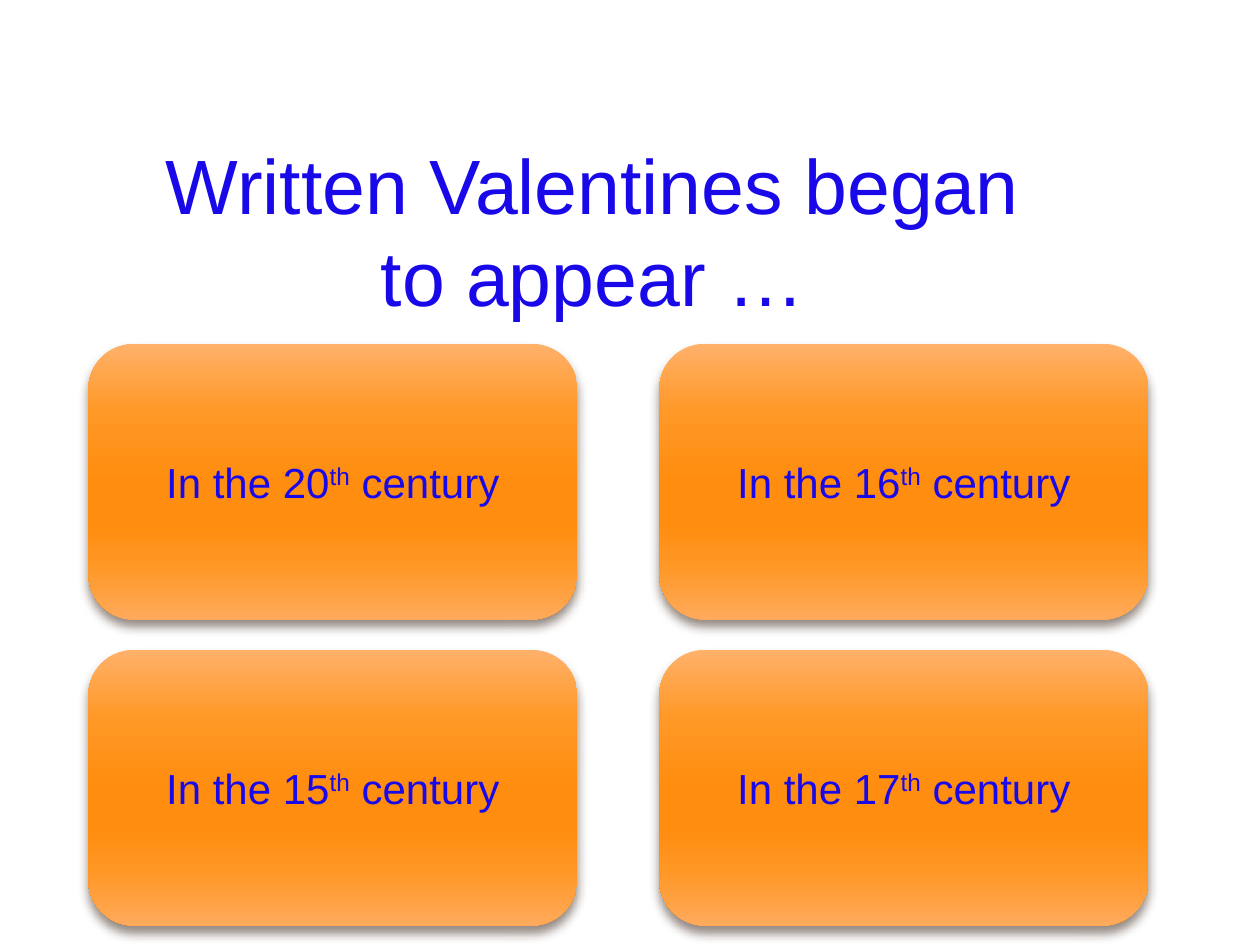
from lxml import etree
from pptx import Presentation
from pptx.dml.color import RGBColor
from pptx.enum.shapes import MSO_SHAPE
from pptx.enum.text import MSO_ANCHOR, MSO_AUTO_SIZE, PP_ALIGN
from pptx.oxml.ns import qn
from pptx.util import Cm, Pt

ROUNDED = MSO_SHAPE.ROUNDED_RECTANGLE
CENTER = PP_ALIGN.CENTER
MIDDLE = MSO_ANCHOR.MIDDLE
GROW = MSO_AUTO_SIZE.SHAPE_TO_FIT_TEXT

BLUE = RGBColor(0x19, 0x09, 0xE9)
SHADOW = RGBColor(0x4E, 0x3B, 0x30)
ORANGE_STOPS = [
    (0, RGBColor(0xFF, 0xB1, 0x6A)),
    (25, RGBColor(0xFF, 0x98, 0x26)),
    (50, RGBColor(0xFF, 0x8D, 0x0F)),
    (65, RGBColor(0xFF, 0x8D, 0x0F)),
    (80, RGBColor(0xFF, 0x97, 0x24)),
    (100, RGBColor(0xFF, 0xAA, 0x5C)),
]

LEFT, TOP = 1.78, 6.93
CARD_WIDTH, CARD_HEIGHT = 9.86, 5.56
COLUMN_STEP, ROW_STEP = 11.51, 6.17
CENTURIES = [["20", "16"], ["15", "17"]]


def add_element(parent, tag, **attributes):
    element = etree.SubElement(parent, qn(tag))
    for name, value in attributes.items():
        element.set(name, str(value))
    return element


class QuizSlide:
    def __init__(self, slide, font_name="Arial", color=BLUE):
        self.slide = slide
        self.font_name = font_name
        self.color = color

    def style(self, paragraph, size):
        paragraph.alignment = CENTER
        paragraph.font.name = self.font_name
        paragraph.font.size = Pt(size)
        paragraph.font.color.rgb = self.color

    def question(self, text, left, top, width, height):
        box = self.slide.shapes.add_textbox(Cm(left), Cm(top), Cm(width), Cm(height))
        frame = box.text_frame
        frame.word_wrap = True
        frame.auto_size = GROW
        paragraph = frame.paragraphs[0]
        paragraph.text = text
        paragraph.line_spacing = Pt(52.6)
        self.style(paragraph, 44)

    def answer(self, century, left, top):
        card = self.slide.shapes.add_shape(
            ROUNDED, Cm(left), Cm(top), Cm(CARD_WIDTH), Cm(CARD_HEIGHT))
        card.line.fill.background()
        self.fill_gradient(card)
        self.cast_shadow(card)
        card.text_frame.vertical_anchor = MIDDLE
        paragraph = card.text_frame.paragraphs[0]
        self.style(paragraph, 24)
        for text in (f"In the {century}", "th", " century"):
            run = paragraph.add_run()
            run.text = text
            if text == "th":
                run.font._element.set("baseline", "30000")

    def fill_gradient(self, shape):
        """Fill from top to bottom with all the orange stops."""
        shape.fill.gradient()
        shape.fill.gradient_angle = 270
        stops = shape._element.spPr.find(qn("a:gradFill")).find(qn("a:gsLst"))
        for stop in list(stops):
            stops.remove(stop)
        for position, color in ORANGE_STOPS:
            stop = add_element(stops, "a:gs", pos=position * 1000)
            add_element(stop, "a:srgbClr", val=color)

    def cast_shadow(self, shape):
        shape.shadow.inherit = False
        effects = shape._element.spPr.find(qn("a:effectLst"))
        shadow = add_element(effects, "a:outerShdw", blurRad=Pt(6), dist=Pt(4),
                             dir=90 * 60000, algn="ctr", rotWithShape=0)
        color = add_element(shadow, "a:srgbClr", val=SHADOW)
        add_element(color, "a:alpha", val=60000)


def main():
    presentation = Presentation()
    presentation.slide_width = Cm(25.4)
    presentation.slide_height = Cm(19.05)
    quiz = QuizSlide(presentation.slides.add_slide(presentation.slide_layouts[6]))

    quiz.question("Written Valentines began to appear …", 3.02, 2.65, 17.86, 2.13)
    for row, centuries in enumerate(CENTURIES):
        for column, century in enumerate(centuries):
            quiz.answer(century, LEFT + column * COLUMN_STEP, TOP + row * ROW_STEP)

    presentation.save("out.pptx")


if __name__ == "__main__":
    main()
